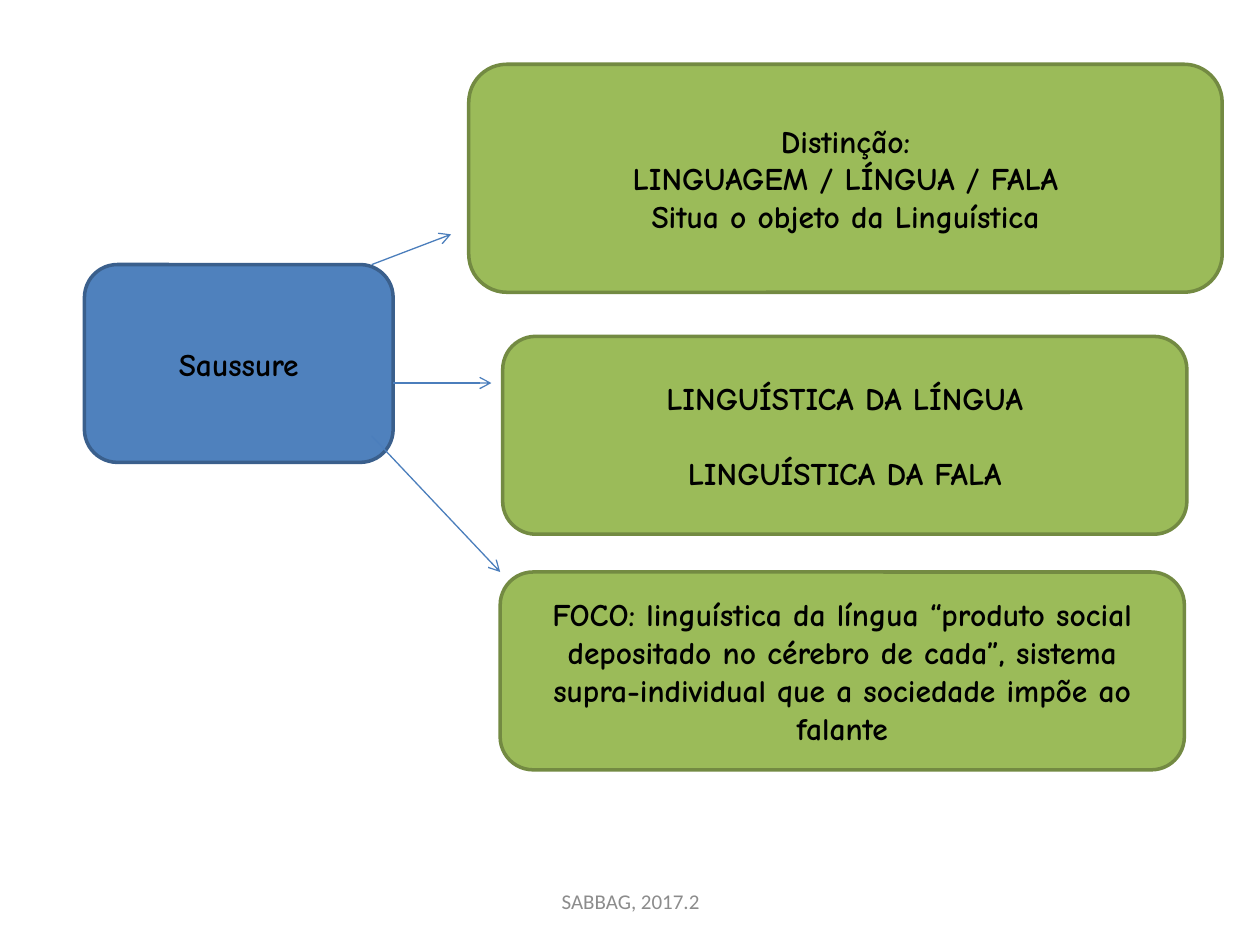
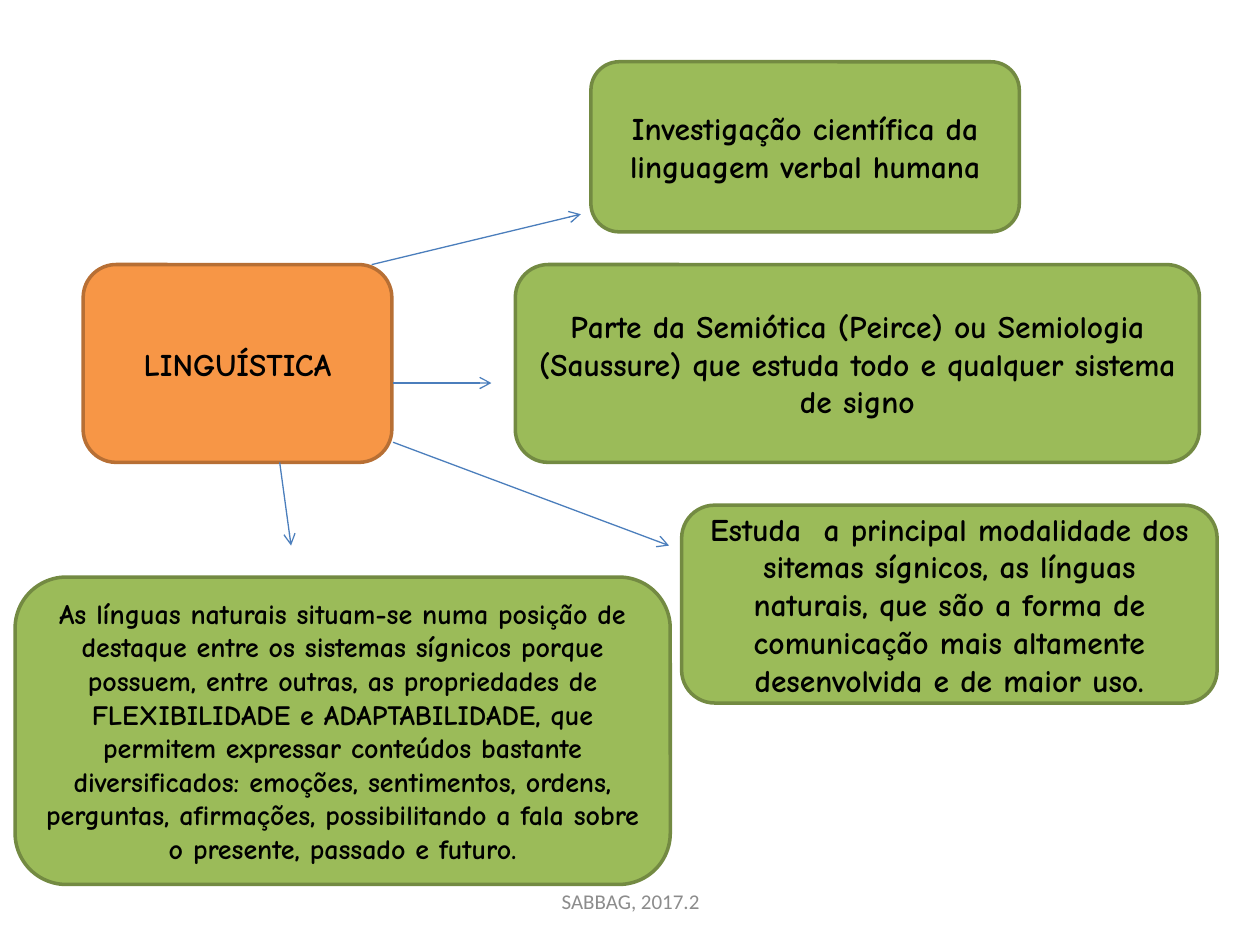
"""Build two concept maps about Saussure and linguistics."""
from pptx import Presentation
from pptx.dml.color import RGBColor
from pptx.enum.shapes import MSO_CONNECTOR, MSO_SHAPE
from pptx.enum.text import MSO_ANCHOR, PP_ALIGN
from pptx.oxml.ns import qn
from pptx.util import Inches, Pt
from lxml.etree import SubElement

BLACK = RGBColor(0x00, 0x00, 0x00)
GRAY = RGBColor(0x8C, 0x8C, 0x8C)
BLUE = RGBColor(0x4F, 0x81, 0xBD)
BLUE_EDGE = RGBColor(0x3A, 0x5F, 0x8C)
ORANGE = RGBColor(0xF7, 0x96, 0x46)
ORANGE_EDGE = RGBColor(0xB7, 0x6F, 0x34)
GREEN = RGBColor(0x9B, 0xBB, 0x59)
GREEN_EDGE = RGBColor(0x73, 0x8A, 0x42)
ARROW_BLUE = RGBColor(0x4B, 0x7E, 0xBC)

COLUMNS, ROWS = 100, 75
TOPIC_TOP, TOPIC_WIDTH, BOX_HEIGHT = 21, 24.5, 15.7
IDEA_WIDTH = 54.3


class ConceptMap:
    def __init__(self, presentation):
        self.presentation = presentation
        self.slide = None

    def place(self, column, row):
        return (round(self.presentation.slide_width * column / COLUMNS),
                round(self.presentation.slide_height * row / ROWS))

    def start_slide(self):
        self.slide = self.presentation.slides.add_slide(
            self.presentation.slide_layouts[6])
        footer = self.slide.shapes.add_textbox(
            *self.place(34.2, 69.5), *self.place(31.7, 4))
        self.set_text(footer, ["SABBAG, 2017.2"], 12, "Calibri", GRAY, False)

    def set_text(self, shape, lines, size, font_name, color, bold, gap=0):
        text_frame = shape.text_frame
        text_frame.text = "\n".join(lines)
        text_frame.word_wrap = True
        text_frame.vertical_anchor = MSO_ANCHOR.MIDDLE
        for index, paragraph in enumerate(text_frame.paragraphs):
            paragraph.alignment = PP_ALIGN.CENTER
            if gap and index:
                paragraph.space_before = Pt(gap)
            for run in paragraph.runs:
                run.font.size = Pt(size)
                run.font.name = font_name
                run.font.bold = bold
                run.font.color.rgb = color

    def box(self, column, row, width, height, lines, fill, edge, size=18, gap=0):
        shape = self.slide.shapes.add_shape(
            MSO_SHAPE.ROUNDED_RECTANGLE,
            *self.place(column, row), *self.place(width, height))
        shape.shadow.inherit = False
        shape.fill.solid()
        shape.fill.fore_color.rgb = fill
        shape.line.color.rgb = edge
        shape.line.width = Pt(2)
        self.set_text(shape, lines, size, "Comic Neue", BLACK, True, gap)

    def topic(self, column, name, fill, edge):
        self.box(column, TOPIC_TOP, TOPIC_WIDTH, BOX_HEIGHT, [name], fill, edge)

    def idea(self, column, row, *lines, width=IDEA_WIDTH, height=BOX_HEIGHT,
             size=18, gap=0):
        self.box(column, row, width, height, lines, GREEN, GREEN_EDGE, size, gap)

    def arrow(self, start, end):
        connector = self.slide.shapes.add_connector(
            MSO_CONNECTOR.STRAIGHT, *self.place(*start), *self.place(*end))
        connector.line.color.rgb = ARROW_BLUE
        connector.line.width = Pt(0.75)
        properties = connector._element.spPr
        SubElement(properties.find(qn("a:ln")), qn("a:tailEnd"), type="arrow")
        SubElement(properties, qn("a:effectLst"))

    def arrows(self, *routes):
        for start, end in routes:
            self.arrow(start, end)


def add_saussure(concept_map):
    concept_map.start_slide()
    concept_map.topic(6.7, "Saussure", BLUE, BLUE_EDGE)
    concept_map.idea(37.2, 5.1, "Distinção:", "LINGUAGEM / LÍNGUA / FALA",
                     "Situa o objeto da Linguística", width=59.8, height=18.1)
    concept_map.idea(39.9, 26.7, "LINGUÍSTICA DA LÍNGUA", "LINGUÍSTICA DA FALA",
                     gap=21.5)
    concept_map.idea(
        39.7, 45.4,
        "FOCO: linguística da língua “produto social depositado no cérebro de "
        "cada”, sistema supra-individual que a sociedade impõe ao falante")
    concept_map.arrows(((29.5, 21), (35.8, 18.6)),
                       ((31.2, 30.4), (39, 30.4)),
                       ((29.5, 34.6), (39.7, 45.4)))


def add_linguistics(concept_map):
    concept_map.start_slide()
    concept_map.topic(6.6, "LINGUÍSTICA", ORANGE, ORANGE_EDGE)
    concept_map.idea(46.9, 4.9,
                     "Investigação científica da linguagem verbal humana",
                     width=34, height=13.5)
    concept_map.idea(
        40.9, TOPIC_TOP,
        "Parte da Semiótica (Peirce) ou Semiologia (Saussure) que estuda todo "
        "e qualquer sistema de signo")
    concept_map.idea(
        54.1, 40.1,
        "Estuda  a principal modalidade dos sitemas sígnicos, as línguas "
        "naturais, que são a forma de comunicação mais altamente desenvolvida "
        "e de maior uso.", width=42.5)
    concept_map.idea(
        1.2, 45.8,
        "As línguas naturais situam-se numa posição de destaque entre os "
        "sistemas sígnicos porque possuem, entre outras, as propriedades de "
        "FLEXIBILIDADE e ADAPTABILIDADE, que permitem expressar conteúdos "
        "bastante diversificados: emoções, sentimentos, ordens, perguntas, "
        "afirmações, possibilitando a fala sobre o presente, passado e futuro.",
        width=52, height=24.4, size=16)
    concept_map.arrows(((29.5, 21), (46.1, 17)),
                       ((31.2, 30.4), (39, 30.4)),
                       ((31.2, 35.1), (53.1, 43.3)),
                       ((22.2, 36.7), (23.1, 43.3)))


def main():
    presentation = Presentation()
    presentation.slide_width = Inches(10)
    presentation.slide_height = Inches(7.5)
    concept_map = ConceptMap(presentation)
    add_saussure(concept_map)
    add_linguistics(concept_map)
    presentation.save("out.pptx")


if __name__ == "__main__":
    main()
